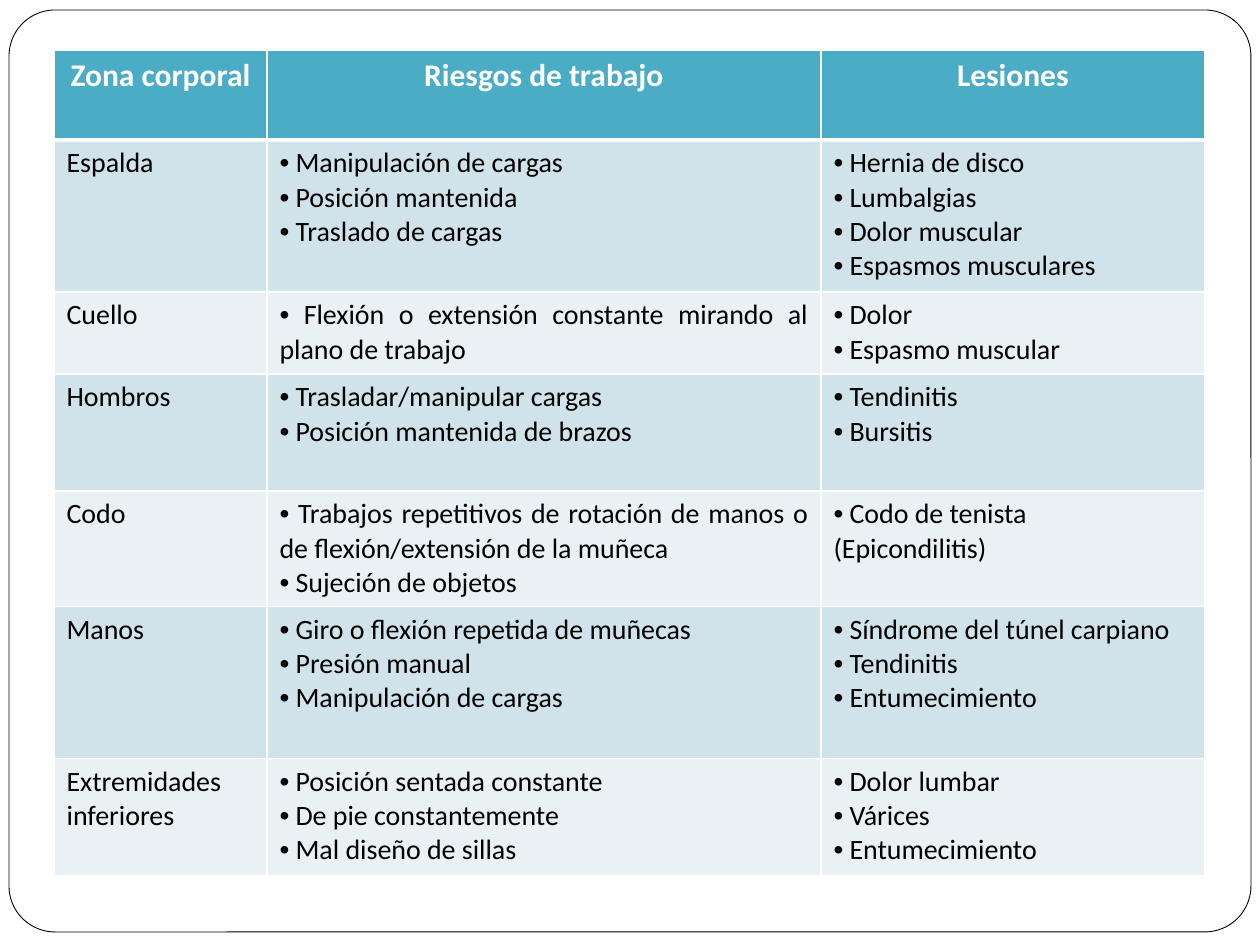
"""Build a slide with a table of body zones, work risks and injuries."""
from dataclasses import dataclass

from lxml.etree import SubElement
from pptx import Presentation
from pptx.dml.color import RGBColor
from pptx.enum.shapes import MSO_SHAPE
from pptx.enum.text import PP_ALIGN
from pptx.oxml.ns import qn
from pptx.util import Emu, Pt

EMU_PER_PX = 914400 / 126


@dataclass(frozen=True)
class Theme:
    font: str = "Calibri"
    head_size: int = 18
    body_size: int = 16
    white: str = "FFFFFF"
    black: str = "000000"
    head_fill: str = "4BACC6"
    bands: tuple[str, str] = ("D0E3EA", "E9F1F5")
    frame_width: float = 0.5
    border_width: int = 1
    head_border_width: int = 3


@dataclass(frozen=True)
class Zone:
    name: str
    height: int
    risks: tuple[str, ...]
    injuries: tuple[str, ...]
    note: str = ""


THEME = Theme()
HEADERS = ("Zona corporal", "Riesgos de trabajo", "Lesiones")
HEAD_HEIGHT = 90
COLUMN_WIDTHS = (213, 554, 384)
ZONES = (
    Zone("Espalda", 152,
         ("Manipulación de cargas", "Posición mantenida", "Traslado de cargas"),
         ("Hernia de disco", "Lumbalgias", "Dolor muscular", "Espasmos musculares")),
    Zone("Cuello", 82,
         ("Flexión o extensión constante mirando al plano de trabajo",),
         ("Dolor", "Espasmo muscular")),
    Zone("Hombros", 117,
         ("Trasladar/manipular cargas", "Posición mantenida de brazos"),
         ("Tendinitis", "Bursitis")),
    Zone("Codo", 115,
         ("Trabajos repetitivos de rotación de manos o de flexión/extensión de la muñeca",
          "Sujeción de objetos"),
         ("Codo de tenista",), "(Epicondilitis)"),
    Zone("Manos", 152,
         ("Giro o flexión repetida de muñecas", "Presión manual", "Manipulación de cargas"),
         ("Síndrome del túnel carpiano", "Tendinitis", "Entumecimiento")),
    Zone("Extremidades inferiores", 117,
         ("Posición sentada constante", "De pie constantemente", "Mal diseño de sillas"),
         ("Dolor lumbar", "Várices", "Entumecimiento")),
)


def px(value: int) -> Emu:
    return Emu(round(value * EMU_PER_PX))


def rgb(color: str) -> RGBColor:
    return RGBColor.from_string(color)


def add_frame(s) -> None:
    sp = s.shapes.add_shape(MSO_SHAPE.ROUNDED_RECTANGLE, px(9), px(10), px(1242), px(922))
    sp.adjustments[0] = 0.05
    sp.shadow.inherit = False
    sp.fill.solid()
    sp.fill.fore_color.rgb = rgb(THEME.white)
    sp.line.color.rgb = rgb(THEME.black)
    sp.line.width = Pt(THEME.frame_width)


def style_cell(cell, fill: str, top: int, bottom: int) -> None:
    tc_pr = cell._tc.get_or_add_tcPr()
    widths = {"L": THEME.border_width, "R": THEME.border_width, "T": top, "B": bottom}
    for side, width in widths.items():
        ln = SubElement(tc_pr, qn(f"a:ln{side}"), w=str(Pt(width)))
        SubElement(SubElement(ln, qn("a:solidFill")), qn("a:srgbClr"), val=THEME.white)
    cell.fill.solid()
    cell.fill.fore_color.rgb = rgb(fill)


def add_text(p, text: str, header: bool = False) -> None:
    p.alignment = PP_ALIGN.CENTER if header else PP_ALIGN.JUSTIFY
    r = p.add_run()
    r.text = text
    r.font.name = THEME.font
    r.font.size = Pt(THEME.head_size if header else THEME.body_size)
    r.font.bold = header
    r.font.color.rgb = rgb(THEME.white if header else THEME.black)


def add_bullets(tf, items: tuple[str, ...]) -> None:
    for i, item in enumerate(items):
        p = tf.add_paragraph() if i else tf.paragraphs[0]
        add_text(p, f" {item}")
        p_pr = p._p.get_or_add_pPr()
        SubElement(p_pr, qn("a:buFont"), typeface="Arial")
        SubElement(p_pr, qn("a:buChar"), char="•")


def add_zone_table(s) -> None:
    heights = (HEAD_HEIGHT, *(zone.height for zone in ZONES))
    table = s.shapes.add_table(
        len(heights), len(HEADERS), px(54), px(50), px(sum(COLUMN_WIDTHS)), px(sum(heights))
    ).table
    for column, width in zip(table.columns, COLUMN_WIDTHS):
        column.width = px(width)
    for i, (row, height) in enumerate(zip(table.rows, heights)):
        row.height = px(height)
        fill = THEME.bands[(i - 1) % 2] if i else THEME.head_fill
        top = THEME.head_border_width if i == 1 else THEME.border_width
        bottom = THEME.border_width if i else THEME.head_border_width
        for cell in row.cells:
            style_cell(cell, fill, top, bottom)
    for col, header in enumerate(HEADERS):
        add_text(table.cell(0, col).text_frame.paragraphs[0], header, header=True)
    for i, zone in enumerate(ZONES, start=1):
        name, risks, injuries = (cell.text_frame for cell in table.rows[i].cells)
        add_text(name.paragraphs[0], zone.name)
        add_bullets(risks, zone.risks)
        add_bullets(injuries, zone.injuries)
        if zone.note:
            add_text(injuries.add_paragraph(), zone.note)


def main() -> None:
    prs = Presentation()
    prs.slide_width, prs.slide_height = px(1260), px(945)
    s = prs.slides.add_slide(prs.slide_layouts[6])
    add_frame(s)
    add_zone_table(s)
    prs.save("out.pptx")


if __name__ == "__main__":
    main()
